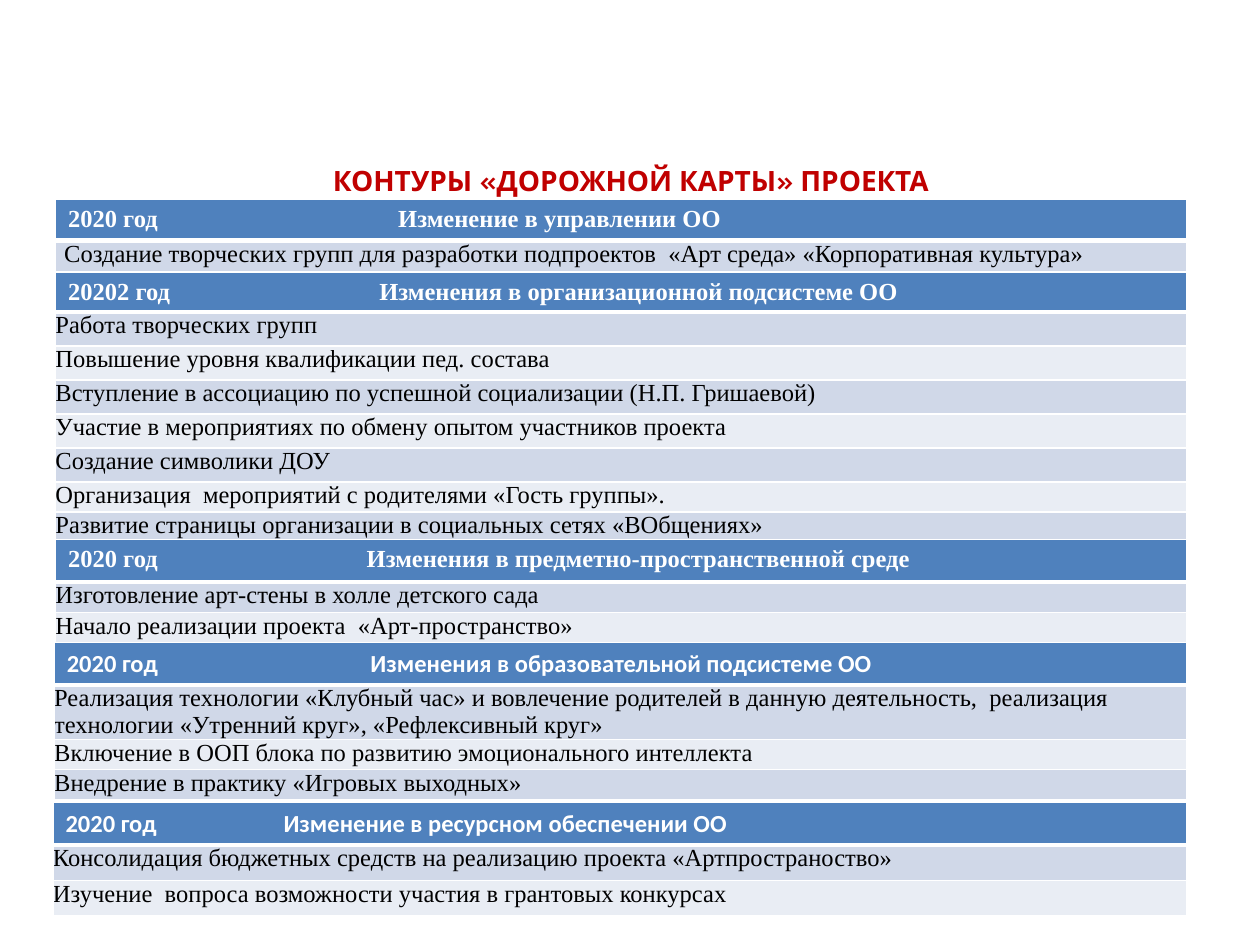
from dataclasses import dataclass

from lxml.etree import SubElement
from pptx import Presentation
from pptx.dml.color import RGBColor
from pptx.enum.text import MSO_ANCHOR, PP_ALIGN
from pptx.oxml.ns import qn
from pptx.util import Inches, Pt

COLUMNS, ROWS = 100, 75
SLIDE_WIDTH, SLIDE_HEIGHT = Inches(10), Inches(7.5)


@dataclass(frozen=True)
class Theme:
    title_color: str = "C00000"
    header_fill: str = "4F81BD"
    header_text: str = "FFFFFF"
    band_fills: tuple = ("D0D8E8", "E9EDF4")
    body_text: str = "000000"
    border: str = "FFFFFF"
    title_font: str = "Karla"
    body_font: str = "Times New Roman"
    accent_font: str = "Calibri"
    title_size: int = 16
    table_size: int = 14
    thin_line: int = 1
    thick_line: int = 3


@dataclass(frozen=True)
class Box:
    left: float
    top: float
    width: float
    height: float = 0


@dataclass(frozen=True)
class Section:
    box: Box
    year: str
    heading: str
    tab: float
    items: tuple
    row_heights: tuple
    header_font: str = Theme.body_font
    item_inset: float = 0


SECTIONS = (
    Section(
        Box(4.4, 15.8, 89.8), "2020 год", "Изменение в управлении ОО", 26.2,
        ("Создание творческих групп для разработки подпроектов  «Арт среда» «Корпоративная культура»",),
        (3.3, 2.6), item_inset=0.7,
    ),
    Section(
        Box(4.4, 21.6, 89.8), "20202 год", "Изменения в организационной подсистеме ОО", 24.7,
        (
            "Работа творческих групп",
            "Повышение уровня квалификации пед. состава",
            "Вступление в ассоциацию по успешной социализации (Н.П. Гришаевой)",
            "Участие в мероприятиях по обмену опытом участников проекта",
            "Создание символики ДОУ",
            "Организация  мероприятий с родителями «Гость группы».",
            "Развитие страницы организации в социальных сетях «ВОбщениях»",
        ),
        (3.1, *[2.7] * 5, 2.4, 2.7),
    ),
    Section(
        Box(4.4, 42.8, 89.8), "2020 год", "Изменения в предметно-пространственной среде", 23.7,
        (
            "Изготовление арт-стены в холле детского сада",
            "Начало реализации проекта  «Арт-пространство»",
        ),
        (3.4, 2.4, 2.4),
    ),
    Section(
        Box(4.3, 51, 89.9), "2020 год", "Изменения в образовательной подсистеме ОО", 24.1,
        (
            "Реализация технологии «Клубный час» и вовлечение родителей в данную деятельность,  "
            "реализация технологии «Утренний круг», «Рефлексивный круг»",
            "Включение в ООП блока по развитию эмоционального интеллекта",
            "Внедрение в практику «Игровых выходных»",
        ),
        (2.8, 4.1, 2.4, 2.4), header_font=Theme.accent_font,
    ),
    Section(
        Box(4.2, 63.7, 90), "2020 год", "Изменение в ресурсном обеспечении ОО", 17.3,
        (
            "Консолидация бюджетных средств на реализацию проекта «Артпространоство»",
            "Изучение  вопроса возможности участия в грантовых конкурсах",
        ),
        (3.2, 2.8, 2.8), header_font=Theme.accent_font,
    ),
)


def across(columns):
    return round(SLIDE_WIDTH * columns / COLUMNS)


def down(rows):
    return round(SLIDE_HEIGHT * rows / ROWS)


def write_text(frame, text, *, font, size, color, bold=False,
               align=PP_ALIGN.LEFT, spacing=None, tab=None):
    paragraph = frame.paragraphs[0]
    paragraph.alignment = align
    if spacing:
        paragraph.line_spacing = spacing
    if tab:
        stops = SubElement(paragraph._p.get_or_add_pPr(), qn("a:tabLst"))
        SubElement(stops, qn("a:tab"), pos=str(across(tab)), algn="l")
    run = paragraph.add_run()
    run.text = text
    run.font.name = font
    run.font.size = Pt(size)
    run.font.bold = bold
    run.font.color.rgb = RGBColor.from_string(color)


def style_cell(cell, theme, fill, bottom_width):
    properties = cell._tc.get_or_add_tcPr()
    for side in ("lnL", "lnR", "lnT", "lnB"):
        width = bottom_width if side == "lnB" else theme.thin_line
        line = SubElement(properties, qn(f"a:{side}"), w=str(Pt(width)))
        line_fill = SubElement(line, qn("a:solidFill"))
        SubElement(line_fill, qn("a:srgbClr"), val=theme.border)
    cell.fill.solid()
    cell.fill.fore_color.rgb = RGBColor.from_string(fill)


def place_title(slide, theme, box):
    title = slide.shapes.title
    title.left, title.top = across(box.left), down(box.top)
    title.width, title.height = across(box.width), down(box.height)
    title.text_frame.word_wrap = True
    title.text_frame.vertical_anchor = MSO_ANCHOR.MIDDLE
    write_text(title.text_frame, "КОНТУРЫ «ДОРОЖНОЙ КАРТЫ» ПРОЕКТА",
               font=theme.title_font, size=theme.title_size, color=theme.title_color,
               bold=True, align=PP_ALIGN.CENTER, spacing=0.9)


def place_section(slide, theme, section):
    box = section.box
    table = slide.shapes.add_table(
        len(section.row_heights), 1, across(box.left), down(box.top),
        across(box.width), down(sum(section.row_heights))).table
    table.horz_banding = False
    for row, height in zip(table.rows, section.row_heights):
        row.height = down(height)

    header = table.cell(0, 0)
    style_cell(header, theme, theme.header_fill, theme.thick_line)
    write_text(header.text_frame, f"{section.year}\t{section.heading}",
               font=section.header_font, size=theme.table_size,
               color=theme.header_text, bold=True, tab=section.tab)

    for index, item in enumerate(section.items):
        cell = table.cell(index + 1, 0)
        cell.margin_left = cell.margin_right = across(section.item_inset)
        cell.margin_top = cell.margin_bottom = 0
        style_cell(cell, theme, theme.band_fills[index % 2], theme.thin_line)
        write_text(cell.text_frame, item, font=theme.body_font,
                   size=theme.table_size, color=theme.body_text)


def main():
    theme = Theme()
    presentation = Presentation()
    presentation.slide_width, presentation.slide_height = SLIDE_WIDTH, SLIDE_HEIGHT
    slide = presentation.slides.add_slide(presentation.slide_layouts.get_by_name("Title Only"))
    place_title(slide, theme, Box(9.1, 12.8, 82, 3.4))
    for section in SECTIONS:
        place_section(slide, theme, section)
    presentation.save("out.pptx")


if __name__ == "__main__":
    main()
